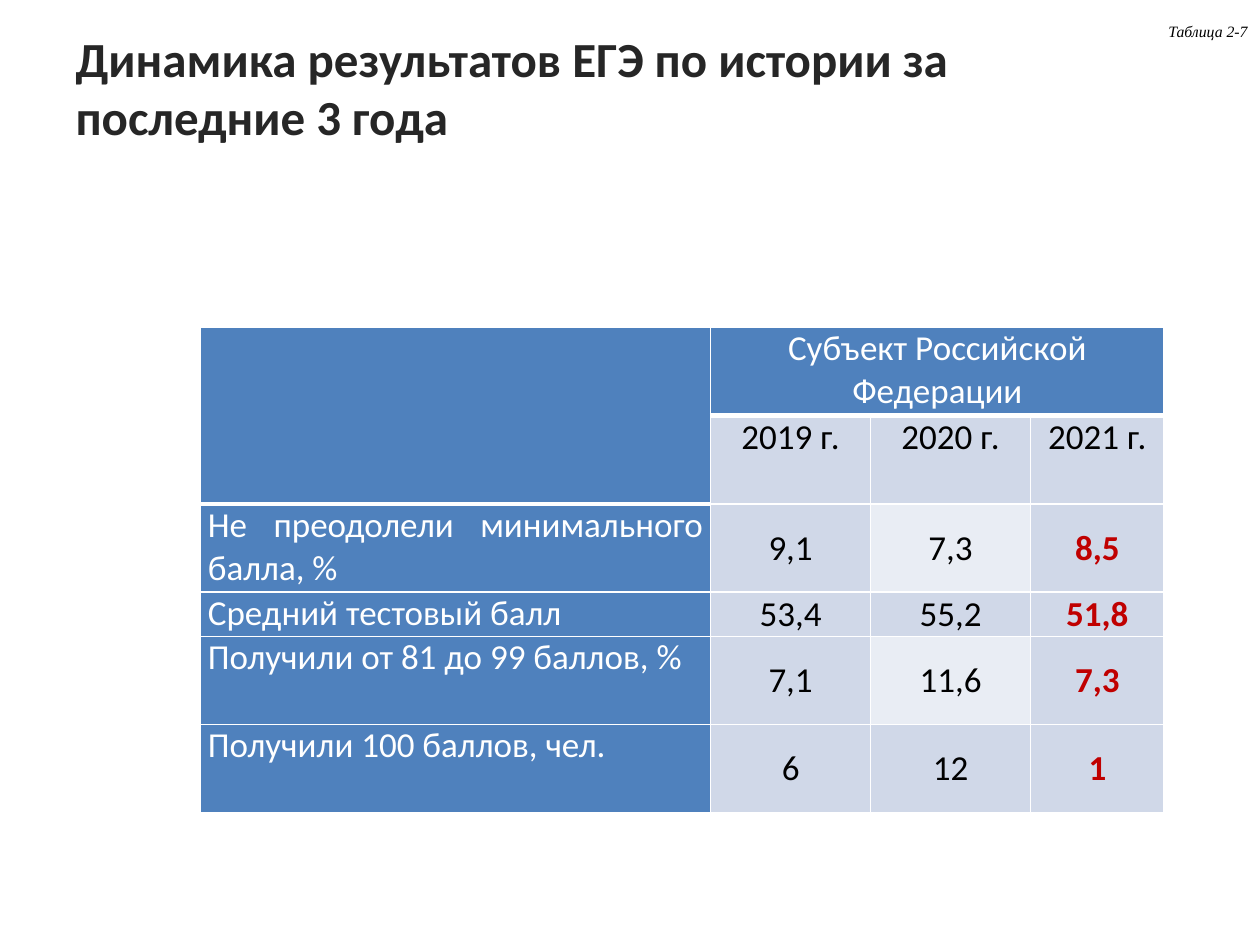
from dataclasses import dataclass
from typing import Optional

import lxml.etree
import pptx
import pptx.dml.color
import pptx.enum.text
import pptx.oxml.ns
import pptx.util

Align = pptx.enum.text.PP_ALIGN
Anchor = pptx.enum.text.MSO_ANCHOR
qn = pptx.oxml.ns.qn


@dataclass(frozen=True)
class Theme:
    sans: str = "Calibri"
    serif: str = "Times New Roman"
    title_size: float = 28
    table_size: float = 20
    label_size: float = 9
    title: str = "262626"
    dark: str = "000000"
    light: str = "FFFFFF"
    accent: str = "C00000"
    header: str = "4F81BD"
    band: str = "D0D8E8"
    pale: str = "E9EDF4"
    thin: float = 1
    thick: float = 3


@dataclass(frozen=True)
class Measure:
    name: str
    values: tuple[str, str, str]
    units: int = 2
    middle_fill: str = Theme.band


THEME = Theme()
WIDTH, HEIGHT = 10, 7.5
ROW_UNIT = 0.35
COLUMNS = (4.05, 1.27, 1.27, 1.06)
YEARS = ("2019 г.", "2020 г.", "2021 г.")
MEASURES = (
    Measure("Не преодолели минимального балла, %", ("9,1", "7,3", "8,5"), middle_fill=THEME.pale),
    Measure("Средний тестовый балл", ("53,4", "55,2", "51,8"), units=1),
    Measure("Получили от 81 до 99 баллов, %", ("7,1", "11,6", "7,3"), middle_fill=THEME.pale),
    Measure("Получили 100 баллов, чел.", ("6", "12", "1")),
)


def inches(*lengths: float) -> list[pptx.util.Length]:
    return [pptx.util.Inches(length) for length in lengths]


def write(frame, text: str, *, size: float, color: str, font: str = THEME.sans,
          bold: bool = False, italic: bool = False, align=Align.LEFT) -> None:
    para = frame.paragraphs[0]
    para.alignment = align
    span = para.add_run()
    span.text = text
    span.font.name = font
    span.font.size = pptx.util.Pt(size)
    span.font.bold = bold
    span.font.italic = italic
    span.font.color.rgb = pptx.dml.color.RGBColor.from_string(color)


def draw_borders(cell, bottom: float) -> None:
    properties = cell._tc.get_or_add_tcPr()
    widths = {"a:lnL": THEME.thin, "a:lnR": THEME.thin, "a:lnT": THEME.thin, "a:lnB": bottom}
    for position, (tag, width) in enumerate(widths.items()):
        line = lxml.etree.Element(qn(tag), w=str(pptx.util.Pt(width)))
        fill = lxml.etree.SubElement(line, qn("a:solidFill"))
        lxml.etree.SubElement(fill, qn("a:srgbClr"), val=THEME.light)
        properties.insert(position, line)


def fill_cell(cell, text: str = "", *, fill: str, color: str = THEME.dark, bold: bool = False,
              align=Align.CENTER, anchor: Optional[Anchor] = Anchor.TOP,
              bottom: float = THEME.thin) -> None:
    cell.fill.solid()
    cell.fill.fore_color.rgb = pptx.dml.color.RGBColor.from_string(fill)
    draw_borders(cell, bottom)
    cell.vertical_anchor = anchor
    cell.margin_left, cell.margin_top, cell.margin_right, cell.margin_bottom = inches(0.06, 0, 0.06, 0)
    if text:
        write(cell.text_frame, text, size=THEME.table_size, color=color, bold=bold, align=align)


def draw_title(page) -> None:
    box = page.shapes.title
    box.left, box.top, box.width, box.height = inches(0.05 * WIDTH, 0.04 * HEIGHT, 0.9 * WIDTH, 1.25)
    frame = box.text_frame
    frame.word_wrap = True
    frame.auto_size = pptx.enum.text.MSO_AUTO_SIZE.NONE
    frame.vertical_anchor = Anchor.MIDDLE
    frame.margin_bottom = pptx.util.Inches(0.52)
    write(frame, "Динамика результатов ЕГЭ по истории за последние 3 года",
          size=THEME.title_size, color=THEME.title, bold=True)


def draw_table(page) -> None:
    units = [2, 2] + [measure.units for measure in MEASURES]
    frame = page.shapes.add_table(
        len(units), len(COLUMNS), *inches(1.59, 2.6, sum(COLUMNS), ROW_UNIT * sum(units)))
    table = frame.table
    table.horz_banding = False
    for column, width in zip(table.columns, COLUMNS):
        column.width = pptx.util.Inches(width)
    for row, count in zip(table.rows, units):
        row.height = pptx.util.Inches(ROW_UNIT * count)

    table.cell(0, 0).merge(table.cell(1, 0))
    table.cell(0, 1).merge(table.cell(0, 3))
    fill_cell(table.cell(0, 0), fill=THEME.header, bottom=THEME.thick)
    fill_cell(table.cell(0, 1), "Субъект Российской Федерации", fill=THEME.header,
              color=THEME.light, bottom=THEME.thick)
    for column, year in enumerate(YEARS, 1):
        fill_cell(table.cell(1, column), year, fill=THEME.band)

    for row, measure in enumerate(MEASURES, 2):
        fill_cell(table.cell(row, 0), measure.name, fill=THEME.header,
                  color=THEME.light, align=Align.JUSTIFY)
        for column, value in enumerate(measure.values, 1):
            latest = column == len(YEARS)
            fill_cell(table.cell(row, column), value,
                      fill=measure.middle_fill if column == 2 else THEME.band,
                      color=THEME.accent if latest else THEME.dark,
                      bold=latest, anchor=Anchor.MIDDLE)


def draw_label(page) -> None:
    width = 0.84
    box = page.shapes.add_textbox(*inches(WIDTH - width, 0.12, width, 0.25))
    frame = box.text_frame
    frame.word_wrap = False
    frame.auto_size = pptx.enum.text.MSO_AUTO_SIZE.SHAPE_TO_FIT_TEXT
    frame.vertical_anchor = Anchor.MIDDLE
    write(frame, "Таблица 2‑7", size=THEME.label_size, color=THEME.dark,
          font=THEME.serif, italic=True, align=Align.RIGHT)


def main() -> None:
    deck = pptx.Presentation()
    deck.slide_width, deck.slide_height = inches(WIDTH, HEIGHT)
    page = deck.slides.add_slide(deck.slide_layouts.get_by_name("Title Only"))
    draw_title(page)
    draw_table(page)
    draw_label(page)
    deck.save("out.pptx")


if __name__ == "__main__":
    main()
